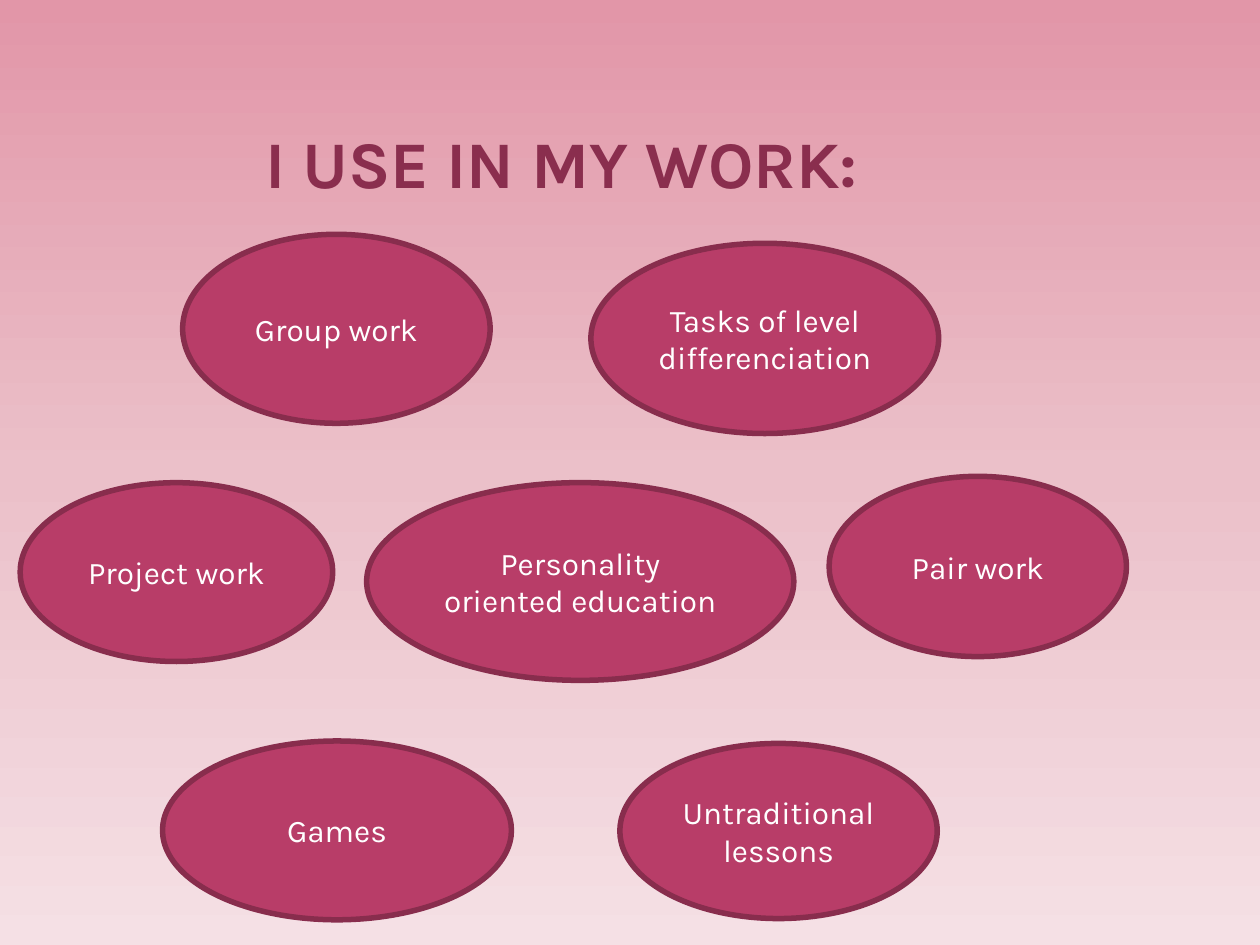
from copy import deepcopy
from dataclasses import dataclass

from pptx import Presentation
from pptx.dml.color import RGBColor as RGB
from pptx.enum.shapes import MSO_SHAPE as Shape
from pptx.enum.text import MSO_ANCHOR as Anchor, PP_ALIGN as Align
from pptx.oxml.ns import qn
from pptx.slide import Slide
from pptx.text.text import TextFrame
from pptx.util import Pt

FONT = "Karla"
COLORS = {
    "top": "E296A8",
    "middle": "EBC0C9",
    "bottom": "F5E0E5",
    "title": "8A2E4E",
    "fill": "B83D68",
    "line": "882D4D",
    "text": "FFFFFF",
}


@dataclass
class Bubble:
    """An ellipse naming one method, measured in points."""

    text: str
    left: float
    top: float
    width: float
    height: float


BUBBLES = [
    Bubble("Personality oriented education", 209.5, 275.8, 244.1, 113),
    Bubble("Group work", 104.4, 133.9, 175.7, 108),
    Bubble("Tasks of level differenciation", 337.7, 139, 198.7, 108.7),
    Bubble("Games", 92.9, 423.4, 199.4, 102.2),
    Bubble("Untraditional\nlessons", 354.2, 424.8, 181.4, 100.1),
    Bubble("Project work", 11.5, 275.8, 178.6, 102.2),
    Bubble("Pair work", 473.8, 272.2, 169.9, 103),
]


def color(name: str) -> RGB:
    """Return a named colour."""
    return RGB.from_string(COLORS[name])


def paint_background(s: Slide) -> None:
    """Fill the slide with a vertical three-stop gradient."""
    fill = s.background.fill
    fill.gradient()
    fill.gradient_angle = 270
    stops = s.element.find(".//" + qn("a:gsLst"))
    stops.insert(1, deepcopy(stops[0]))
    for i, (stop, name) in enumerate(zip(fill.gradient_stops, ("top", "middle", "bottom"))):
        stop.position = i / 2
        stop.color.rgb = color(name)


def write(tf: TextFrame, text: str, size: float, name: str, anchor: Anchor, bold: bool = False) -> None:
    """Write centred, wrapped text in one style."""
    tf.word_wrap = True
    tf.vertical_anchor = anchor
    tf.text = text
    for p in tf.paragraphs:
        p.alignment = Align.CENTER
        p.font.name = FONT
        p.font.size = Pt(size)
        p.font.bold = bold
        p.font.color.rgb = color(name)


def draw_title(s: Slide, text: str) -> None:
    """Draw the heading."""
    tf = s.shapes.add_textbox(Pt(36), Pt(25.2), Pt(570.2), Pt(90)).text_frame
    tf.margin_left = tf.margin_right = Pt(3.6)
    tf.margin_top = tf.margin_bottom = Pt(0)
    write(tf, text, 38, "title", Anchor.BOTTOM, bold=True)


def draw_bubble(s: Slide, b: Bubble) -> None:
    """Draw one labelled ellipse."""
    sp = s.shapes.add_shape(Shape.OVAL, Pt(b.left), Pt(b.top), Pt(b.width), Pt(b.height))
    sp.shadow.inherit = False
    sp.fill.solid()
    sp.fill.fore_color.rgb = color("fill")
    sp.line.color.rgb = color("line")
    sp.line.width = Pt(3.15)
    write(sp.text_frame, b.text, 18, "text", Anchor.MIDDLE)


def main() -> None:
    """Build and save the slide."""
    prs = Presentation()
    prs.slide_width, prs.slide_height = Pt(720), Pt(540)
    s = prs.slides.add_slide(prs.slide_layouts[6])
    paint_background(s)
    draw_title(s, "I USE IN MY WORK:")
    for bubble in BUBBLES:
        draw_bubble(s, bubble)
    prs.save("out.pptx")


if __name__ == "__main__":
    main()
